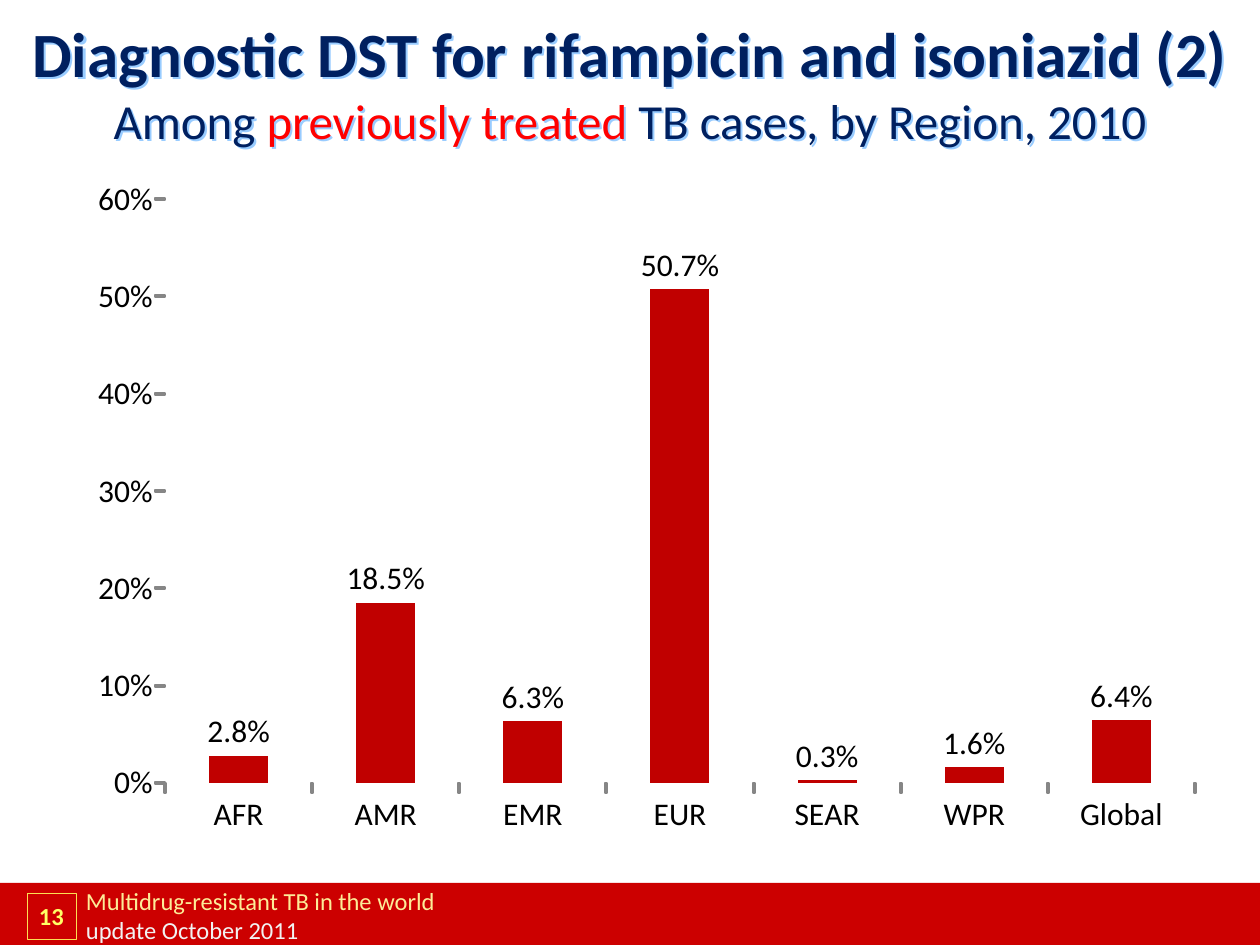
from lxml import etree
from pptx import Presentation
from pptx import util as u
from pptx.chart.data import CategoryChartData
from pptx.dml.color import RGBColor
from pptx.enum import chart as charts, shapes, text
from pptx.oxml import ns

PX = 914400 // 126
FONT = "Calibri"
NAVY, RED, BLACK, GRAY = "002060", "FF0000", "000000", "868686"
REGIONS = ["AFR", "AMR", "EMR", "EUR", "SEAR", "WPR", "Global"]
SHARES = [0.028, 0.185, 0.063, 0.507, 0.003, 0.016, 0.064]
CHART = (60, 160, 1160, 710)
PLOT = (165, 199, 1030, 584)
VALUE_STEPS = 6


def color(value):
    return RGBColor.from_string(value)


def lengths(*values):
    return [value * PX for value in values]


def style_font(font, size, value, bold=False):
    font.name, font.size, font.bold = FONT, u.Pt(size), bold
    font.color.rgb = color(value)


class SlideBuilder:
    def __init__(self, slide):
        self.slide = slide

    def box(self, frame, fill=None, line=None):
        shape = self.slide.shapes.add_shape(shapes.MSO_SHAPE.RECTANGLE, *lengths(*frame))
        return self.paint(shape, fill, line, 0.25)

    def paint(self, shape, fill, line, width):
        shape.shadow.inherit = False
        if fill:
            shape.fill.solid()
            shape.fill.fore_color.rgb = color(fill)
        else:
            shape.fill.background()
        if line:
            shape.line.color.rgb = color(line)
            shape.line.width = u.Pt(width)
        else:
            shape.line.fill.background()
        return shape

    def text_box(self, frame, paragraphs, **options):
        shape = self.slide.shapes.add_textbox(*lengths(*frame))
        return self.set_text(shape, paragraphs, **options)

    def set_text(self, shape, paragraphs, align=text.PP_ALIGN.LEFT,
                 anchor=text.MSO_ANCHOR.TOP, insets=(0, 0)):
        text_frame = shape.text_frame
        text_frame.word_wrap = True
        text_frame.vertical_anchor = anchor
        text_frame.margin_left = text_frame.margin_right = insets[0] * PX
        text_frame.margin_top = text_frame.margin_bottom = insets[1] * PX
        for index, runs in enumerate(paragraphs):
            paragraph = text_frame.add_paragraph() if index else text_frame.paragraphs[0]
            paragraph.alignment = align
            for words, *style in runs:
                run = paragraph.add_run()
                run.text = words
                style_font(run.font, *style)
        return shape

    def text_shadow(self, shape, value):
        shape.shadow.inherit = False
        effects = shape.element.spPr.find(ns.qn("a:effectLst"))
        shadow = etree.SubElement(effects, ns.qn("a:outerShdw"), dist=str(3 * PX),
                                  dir="2700000", algn="tl", rotWithShape="0")
        etree.SubElement(shadow, ns.qn("a:srgbClr"), val=value)

    def ticks(self, frames):
        builder = None
        for left, top, width, height in frames:
            right, bottom = left + width, top + height
            if builder is None:
                builder = self.slide.shapes.build_freeform(left, top, scale=PX)
            else:
                builder.move_to(left, top)
            builder.add_line_segments([(right, top), (right, bottom), (left, bottom)])
        self.paint(builder.convert_to_shape(), GRAY, GRAY, 1.38)

    def column_chart(self, frame, plot, categories, values):
        data = CategoryChartData(number_format="0.0%")
        data.categories = categories
        data.add_series("Share of cases", values)
        chart = self.slide.shapes.add_chart(
            charts.XL_CHART_TYPE.COLUMN_CLUSTERED, *lengths(*frame), data).chart
        chart.has_legend = chart.has_title = False
        style_font(chart.font, 18, BLACK)
        for axis in (chart.category_axis, chart.value_axis):
            axis.has_major_gridlines = False
            axis.major_tick_mark = charts.XL_TICK_MARK.OUTSIDE
            axis.format.line.fill.background()
        value_axis = chart.value_axis
        value_axis.minimum_scale, value_axis.maximum_scale = 0, VALUE_STEPS / 10
        value_axis.major_unit = 0.1
        value_axis.tick_labels.number_format = "0%"
        value_axis.tick_labels.number_format_is_linked = False
        columns = chart.plots[0]
        columns.gap_width = 150
        columns.vary_by_categories = False
        series = columns.series[0]
        series.format.fill.solid()
        series.format.fill.fore_color.rgb = color("C00000")
        columns.has_data_labels = True
        labels = columns.data_labels
        labels.show_value = True
        labels.number_format, labels.number_format_is_linked = "0.0%", False
        labels.position = charts.XL_LABEL_POSITION.OUTSIDE_END
        style_font(labels.font, 18, BLACK)
        self.place_plot(chart, frame, plot)

    def place_plot(self, chart, frame, plot):
        area = chart.element.find(".//" + ns.qn("c:plotArea"))
        layout = area.find(ns.qn("c:layout"))
        if layout is None:
            layout = etree.Element(ns.qn("c:layout"))
            area.insert(0, layout)
        manual = etree.SubElement(layout, ns.qn("c:manualLayout"))
        settings = [("layoutTarget", "inner"), ("xMode", "edge"), ("yMode", "edge"),
                    ("x", (plot[0] - frame[0]) / frame[2]),
                    ("y", (plot[1] - frame[1]) / frame[3]),
                    ("w", plot[2] / frame[2]), ("h", plot[3] / frame[3])]
        for name, value in settings:
            etree.SubElement(manual, ns.qn("c:" + name), val=str(value))


def main():
    presentation = Presentation()
    presentation.slide_width, presentation.slide_height = u.Inches(10), u.Inches(7.5)
    slide = presentation.slides.add_slide(presentation.slide_layouts[6])
    builder = SlideBuilder(slide)
    centre, middle = text.PP_ALIGN.CENTER, text.MSO_ANCHOR.MIDDLE

    builder.box((0, 883, 1260, 65), fill="CC0000")
    page_number = builder.box((27, 893, 49, 46), line="FBDF53")
    builder.set_text(page_number, [[("13", 14, "FFFF66", True)]], align=centre, anchor=middle)
    builder.text_box((86, 886, 811, 59), [
        [("Multidrug-resistant TB in the world", 14, "FDEC98")],
        [("update October 2011", 14, "F2F2F2")]])

    title = builder.text_box((0, -14, 1260, 192), [
        [("Diagnostic DST for rifampicin and isoniazid (2)", 36, NAVY, True)],
        [("Among ", 28, NAVY), ("previously treated ", 28, RED),
         ("TB cases, by Region, 2010", 28, NAVY)]],
        align=centre, anchor=middle, insets=(13, 6))
    builder.text_shadow(title, "99CCFF")

    builder.column_chart(CHART, PLOT, REGIONS, SHARES)
    left, top, width, height = PLOT
    builder.ticks([(left - 10, round(top + height * step / VALUE_STEPS) - 1, 10, 2)
                   for step in range(VALUE_STEPS + 1)])
    builder.ticks([(round(left + width * step / len(REGIONS)) - 1, top + height, 2, 10)
                   for step in range(len(REGIONS) + 1)])
    presentation.save("out.pptx")


if __name__ == "__main__":
    main()
